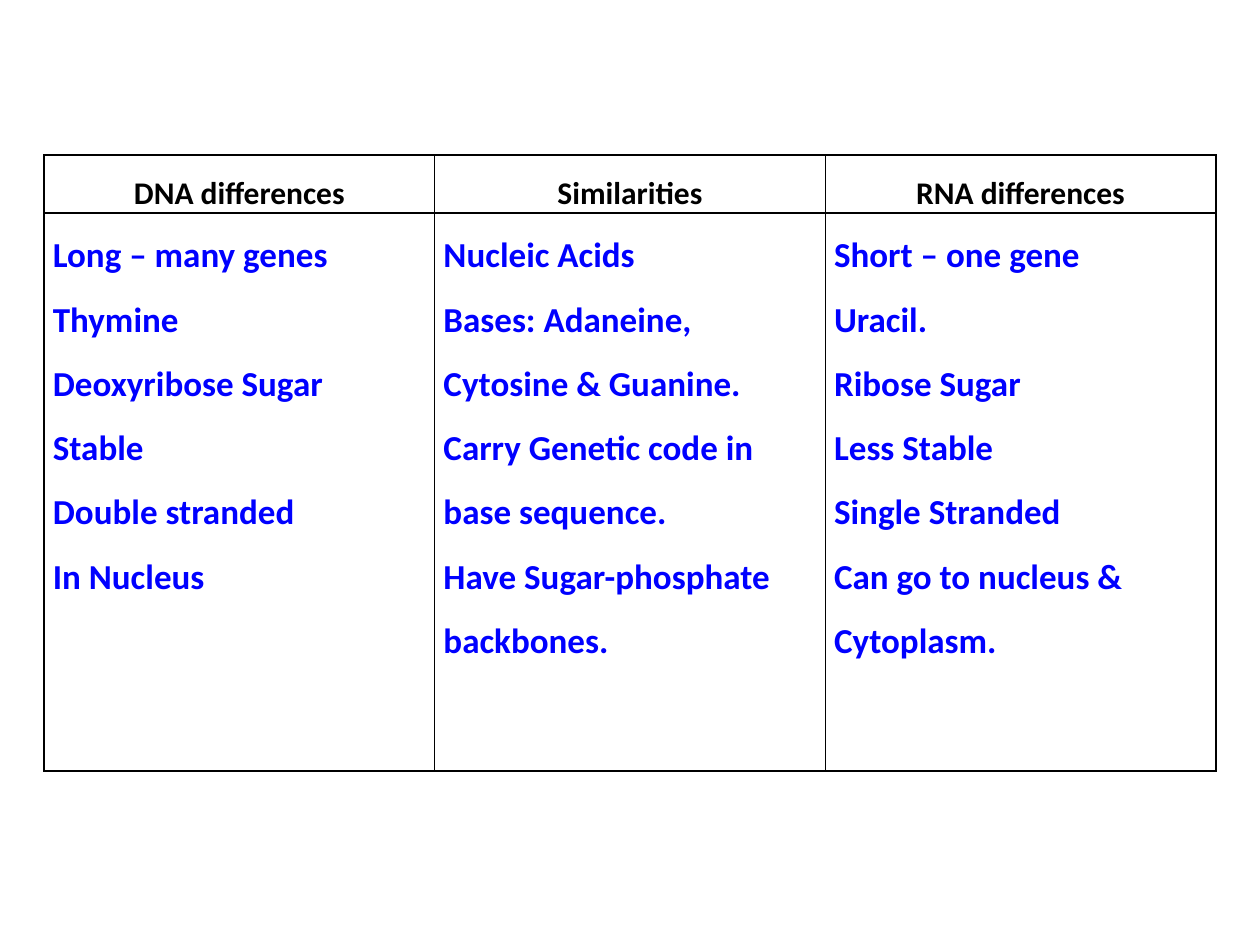
import pptx
import pptx.util
import pptx.dml.color
import pptx.enum.text
import pptx.oxml
import pptx.oxml.ns
from pptx.util import Inches


def color(hex_value):
    return pptx.dml.color.RGBColor.from_string(hex_value)


def add_borders(cell):
    properties = cell._tc.get_or_add_tcPr()
    for side in ("lnL", "lnR", "lnT", "lnB"):
        properties.append(pptx.oxml.parse_xml(
            f'<a:{side} {pptx.oxml.ns.nsdecls("a")} w="{pptx.util.Pt(1)}">'
            f'<a:solidFill><a:srgbClr val="000000"/></a:solidFill></a:{side}>'
        ))


comparison = {
    "DNA differences": [
        "Long – many genes",
        "Thymine",
        "Deoxyribose Sugar",
        "Stable",
        "Double stranded",
        "In Nucleus",
    ],
    "Similarities": [
        "Nucleic Acids",
        "Bases: Adaneine, Cytosine & Guanine.",
        "Carry Genetic code in base sequence.",
        "Have Sugar-phosphate backbones.",
    ],
    "RNA differences": [
        "Short – one gene",
        "Uracil.",
        "Ribose Sugar",
        "Less Stable",
        "Single Stranded",
        "Can go to nucleus & Cytoplasm.",
    ],
}

deck = pptx.Presentation()
deck.slide_width = Inches(10)
deck.slide_height = Inches(7.5)
slide = deck.slides.add_slide(deck.slide_layouts[6])

nucleic_acids = slide.shapes.add_table(
    2, len(comparison), Inches(0.35), Inches(1.23), Inches(9.29), Inches(4.89)
).table
nucleic_acids.first_row = False
nucleic_acids.horz_banding = False
nucleic_acids.rows[0].height = Inches(0.46)
nucleic_acids.rows[1].height = Inches(4.43)

for column, (heading, facts) in enumerate(comparison.items()):
    nucleic_acids.columns[column].width = Inches(3.1)
    row_styles = [
        ([heading], 18, "000000", pptx.enum.text.PP_ALIGN.CENTER),
        (facts, 20, "0000FF", pptx.enum.text.PP_ALIGN.LEFT),
    ]
    for row, (lines, size, ink, alignment) in enumerate(row_styles):
        cell = nucleic_acids.cell(row, column)
        cell.margin_left = cell.margin_right = Inches(0.07)
        cell.margin_top = cell.margin_bottom = 0
        add_borders(cell)
        cell.fill.background()
        for index, line in enumerate(lines):
            frame = cell.text_frame
            paragraph = frame.add_paragraph() if index else frame.paragraphs[0]
            paragraph.alignment = alignment
            paragraph.line_spacing = 1.5
            run = paragraph.add_run()
            run.text = line
            run.font.name = "Calibri"
            run.font.size = pptx.util.Pt(size)
            run.font.bold = True
            run.font.color.rgb = color(ink)

deck.save("out.pptx")
